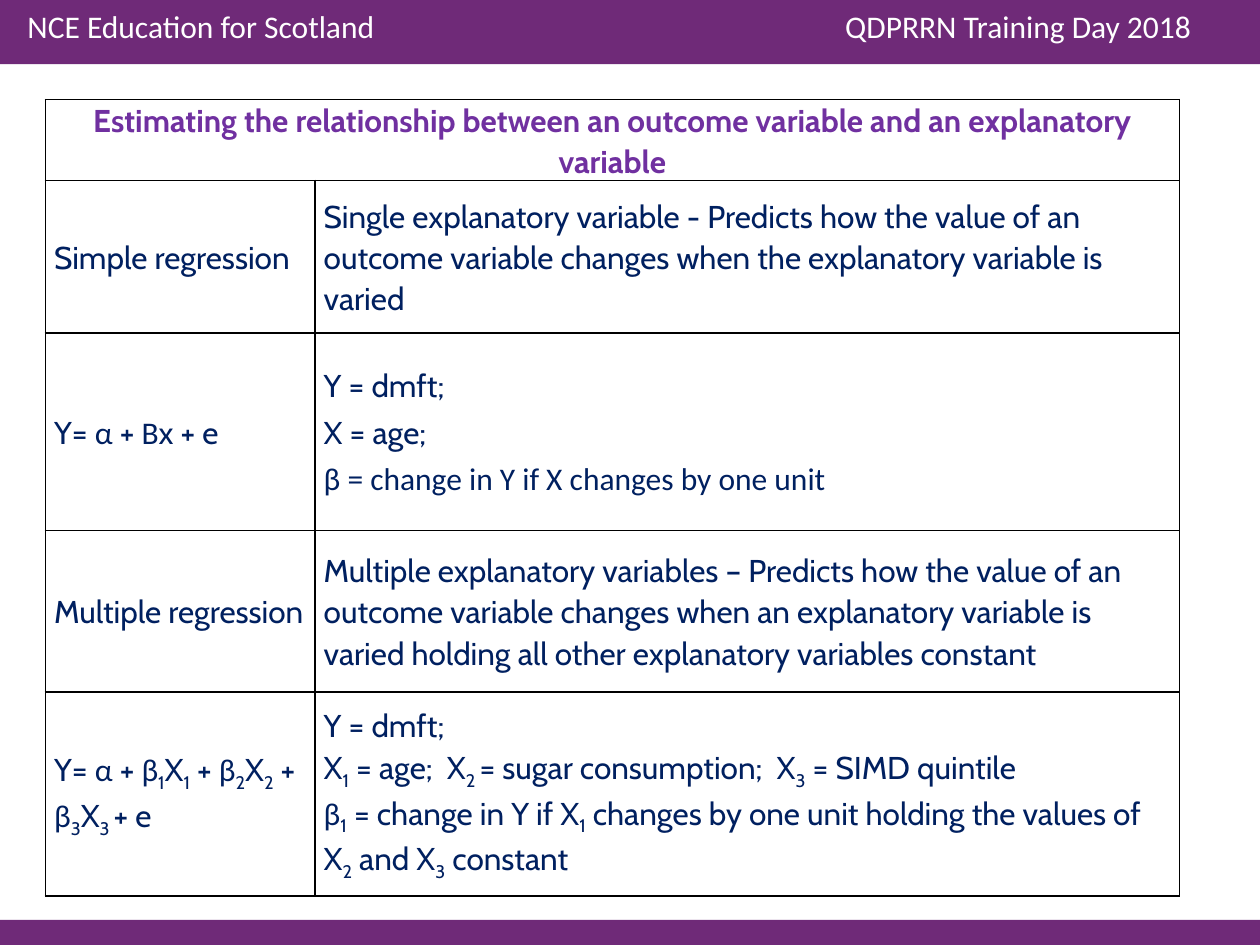
from itertools import groupby

from lxml import etree
from pptx import Presentation
from pptx import util as u
from pptx.dml.color import RGBColor
from pptx.enum import shapes, text
from pptx.oxml import ns

PURPLE, NAVY, TITLE = "6F2A78", "002060", "7030A0"
GREEK = "αβΒ"


def color(value):
    return RGBColor.from_string(value)


def add_runs(paragraph, content, greek_font="Calibri", latin_font="Cabin"):
    """Add runs; text between ~ marks is subscript, Greek letters get their own font."""
    for index, piece in enumerate(content.split("~")):
        for is_greek, letters in groupby(piece, lambda letter: letter in GREEK):
            run = paragraph.add_run()
            run.text = "".join(letters)
            run.font.name = greek_font if is_greek else latin_font
            run.font.size = u.Pt(18)
            run.font.color.rgb = color(NAVY)
            if index % 2:
                run.font._element.set("baseline", "-25000")


presentation = Presentation()
presentation.slide_width = u.Inches(10)
presentation.slide_height = u.Inches(7.5)
slide = presentation.slides.add_slide(presentation.slide_layouts[6])

# Header and footer bars
for top, height in [(0, 0.51), (7.3, 0.28)]:
    bar = slide.shapes.add_shape(shapes.MSO_SHAPE.RECTANGLE, 0, u.Inches(top),
                                 u.Inches(10), u.Inches(height))
    bar.shadow.inherit = False
    bar.fill.solid()
    bar.fill.fore_color.rgb = color(PURPLE)
    bar.line.fill.background()

# Header text, with a tab stop for the event name
header = slide.shapes.add_textbox(u.Inches(0.12), u.Inches(0.01), u.Inches(9.77), u.Inches(0.4))
header.text_frame.word_wrap = True
paragraph = header.text_frame.paragraphs[0]
paragraph.text = "NCE Education for Scotland\tQDPRRN Training Day 2018"
tabs = etree.SubElement(paragraph._p.get_or_add_pPr(), ns.qn("a:tabLst"))
etree.SubElement(tabs, ns.qn("a:tab"), pos=str(u.Inches(6.49)), algn="l")
for run in paragraph.runs:
    run.font.name = "Calibri"
    run.font.size = u.Pt(18)
    run.font.color.rgb = color("FFFFFF")

# Regression table: each cell has its paragraphs, space before and space after
rows = [
    [(["Estimating the relationship between an outcome variable and an explanatory variable"], 0, 0),
     ([""], 0, 0)],
    [(["Simple regression"], 0, 0),
     (["Single explanatory variable - Predicts how the value of an outcome variable "
       "changes when the explanatory variable is varied"], 3, 6)],
    [(["Y= α + Βx + e"], 0, 3),
     (["Y = dmft;", "X = age;", "β = change in Y if X changes by one unit"], 0, 3)],
    [(["Multiple regression"], 12, 0),
     (["Multiple explanatory variables – Predicts how the value of an outcome variable "
       "changes when an explanatory variable is varied holding all other explanatory "
       "variables constant"], 12, 0)],
    [(["Y= α + β~1~X~1~ + β~2~X~2~ + β~3~X~3 ~+ e"], 0, 0),
     (["Y = dmft;",
       "X~1~ = age;  X~2 ~= sugar consumption;  X~3~ = SIMD quintile",
       "β~1~ = change in Y if X~1~ changes by one unit holding the values of "
       "X~2~ and X~3~ constant"], 0, 0)],
]
table = slide.shapes.add_table(len(rows), 2, u.Inches(0.36), u.Inches(0.79),
                               u.Inches(9), u.Inches(6.32)).table
table.first_row = table.horz_banding = False
for column, width in zip(table.columns, [2.14, 6.86]):
    column.width = u.Inches(width)
for row, height in zip(table.rows, [0.64, 1.21, 1.57, 1.28, 1.62]):
    row.height = u.Inches(height)
table.cell(0, 0).merge(table.cell(0, 1))

for row, contents in zip(table.rows, rows):
    for cell, (lines, before, after) in zip(row.cells, contents):
        cell.vertical_anchor = text.MSO_ANCHOR.MIDDLE
        cell.margin_left = cell.margin_right = u.Inches(0.07)
        cell.margin_top = cell.margin_bottom = 0
        # Black borders on every side, no fill
        properties = cell._tc.get_or_add_tcPr()
        for side in ("lnL", "lnR", "lnT", "lnB"):
            border = etree.SubElement(properties, ns.qn("a:" + side), w=str(u.Pt(1)))
            fill = etree.SubElement(border, ns.qn("a:solidFill"))
            etree.SubElement(fill, ns.qn("a:srgbClr"), val="000000")
        cell.fill.background()
        if cell.is_spanned:
            continue
        for index, line in enumerate(lines):
            frame = cell.text_frame
            paragraph = frame.add_paragraph() if index else frame.paragraphs[0]
            paragraph.line_spacing = 1.07
            paragraph.space_before = u.Pt(before)
            paragraph.space_after = u.Pt(after)
            latin_font = "Calibri" if line.startswith("β =") else "Cabin"
            add_runs(paragraph, line, latin_font=latin_font)

# Table heading
heading = table.cell(0, 0).text_frame.paragraphs[0]
heading.alignment = text.PP_ALIGN.CENTER
for run in heading.runs:
    run.font.bold = True
    run.font.color.rgb = color(TITLE)

presentation.save("out.pptx")
